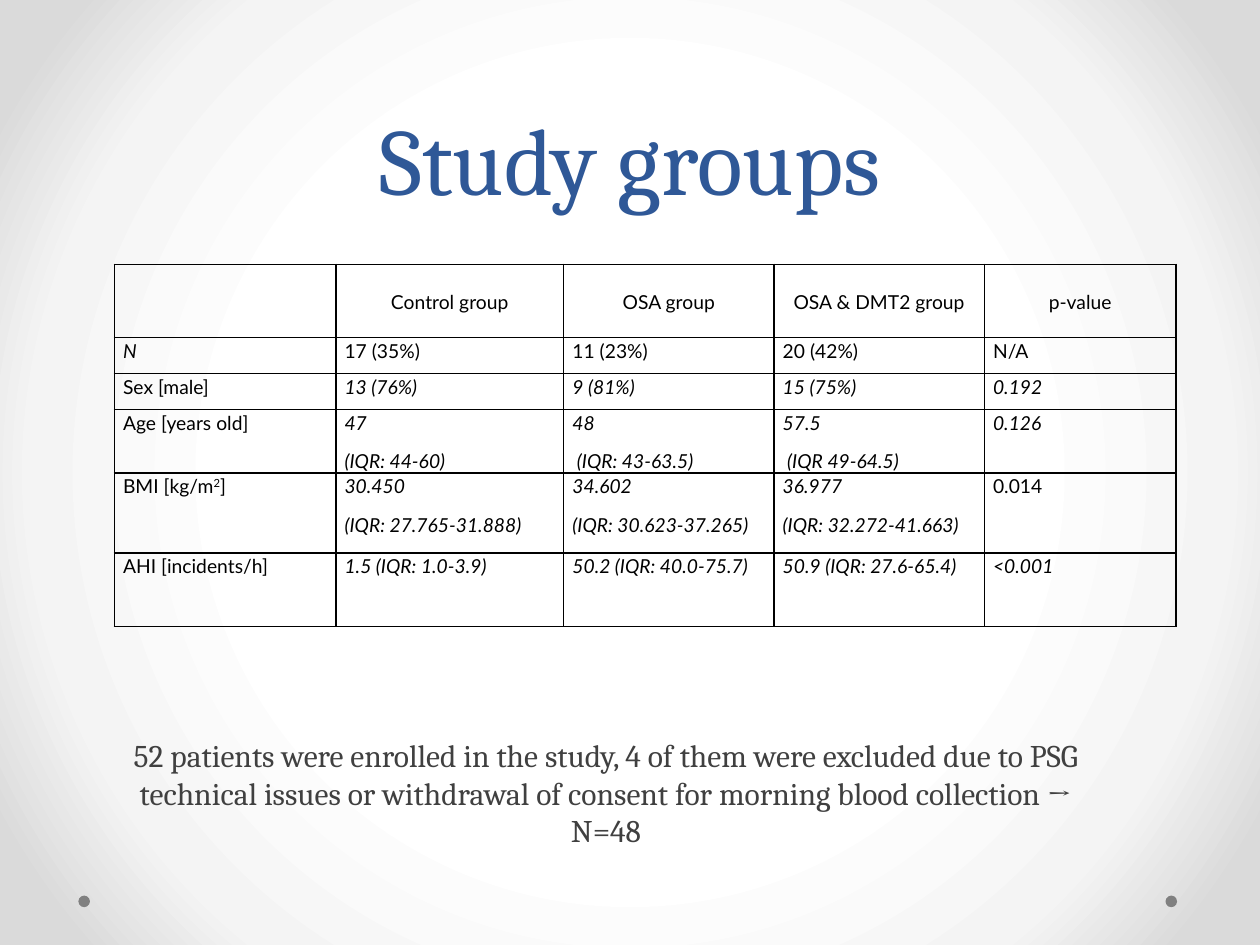
from lxml import etree
from pptx import Presentation
from pptx.dml.color import RGBColor
from pptx.enum.shapes import MSO_SHAPE
from pptx.enum.text import MSO_ANCHOR, PP_ALIGN
from pptx.oxml.ns import qn
from pptx.util import Pt

CENTER, LEFT = PP_ALIGN.CENTER, PP_ALIGN.LEFT
TOP, MIDDLE, BOTTOM = MSO_ANCHOR.TOP, MSO_ANCHOR.MIDDLE, MSO_ANCHOR.BOTTOM
OVAL = MSO_SHAPE.OVAL


def rgb(color):
    return RGBColor.from_string(color)


def add_run(p, text, font, size, color):
    r = p.add_run()
    r.text = text
    r.font.name = font
    r.font.size = Pt(size)
    r.font.color.rgb = rgb(color)
    return r


prs = Presentation()
prs.slide_width, prs.slide_height = Pt(720), Pt(540)
s = prs.slides.add_slide(prs.slide_layouts[6])

# Background: circular gradient, white in the middle
s.background.fill.gradient()
grad = s.background._cSld.find(".//" + qn("a:gradFill"))
for child in list(grad):
    grad.remove(child)
stops = etree.SubElement(grad, qn("a:gsLst"))
for pos, color in [(50, "FFFFFF"), (76, "F4F4F4"), (92, "DADADA")]:
    stop = etree.SubElement(stops, qn("a:gs"), pos=str(pos * 1000))
    etree.SubElement(stop, qn("a:srgbClr"), val=color)
circle = etree.SubElement(grad, qn("a:path"))
circle.set("path", "circle")
etree.SubElement(circle, qn("a:fillToRect"), l="50000", t="50000", r="50000", b="50000")

# Corner dots
for x in (666, 44.8):
    dot = s.shapes.add_shape(OVAL, Pt(x), Pt(511.8), Pt(6.6), Pt(6.6))
    dot.shadow.inherit = False
    dot.fill.solid()
    dot.fill.fore_color.rgb = rgb("808080")
    dot.line.fill.background()

# Title and note below the table
note = ("52 patients were enrolled in the study, 4 of them were excluded due to PSG "
        "technical issues or withdrawal of consent for morning blood collection → N=48")
for text, box, anchor, size, color, spacing in [
    ("Study groups", (36, 0, 648, 126), BOTTOM, 54, "2F5897", Pt(58)),
    (note, (65.5, 416.9, 561.6, 72.7), TOP, 18, "404040", None),
]:
    sp = s.shapes.add_textbox(*map(Pt, box))
    tf = sp.text_frame
    tf.word_wrap = True
    tf.vertical_anchor = anchor
    p = tf.paragraphs[0]
    p.alignment = CENTER
    p.line_spacing = spacing
    add_run(p, text, "Cambria", size, color)

# Table: "\n" parts paragraphs, "^" encloses a superscript
rows = [
    ["", "Control group", "OSA group", "OSA & DMT2 group", "p-value"],
    ["N", "17 (35%)", "11 (23%)", "20 (42%)", "N/A"],
    ["Sex [male]", "13 (76%)", "9 (81%)", "15 (75%)", "0.192"],
    ["Age [years old]", "47\n(IQR: 44-60)", "48\n (IQR: 43-63.5)",
     "57.5\n (IQR 49-64.5)", "0.126"],
    ["BMI [kg/m^2^]", "30.450\n(IQR: 27.765-31.888)", "34.602\n(IQR: 30.623-37.265)",
     "36.977\n(IQR: 32.272-41.663)", "0.014"],
    ["AHI [incidents/h]", "1.5 (IQR: 1.0-3.9)", "50.2 (IQR: 40.0-75.7)",
     "50.9 (IQR: 27.6-65.4)", "<0.001"],
]
widths = [126.6, 130.2, 120.2, 120.2, 109.6]
heights = [41.8, 20.6, 20.6, 36.2, 45.8, 42]
table = s.shapes.add_table(len(rows), len(widths), Pt(65.3), Pt(151),
                           Pt(sum(widths)), Pt(sum(heights))).table
table.first_row = table.horz_banding = False
for column, width in zip(table.columns, widths):
    column.width = Pt(width)
for row, height in zip(table.rows, heights):
    row.height = Pt(height)

for i, row in enumerate(rows):
    for j, text in enumerate(row):
        cell = table.cell(i, j)
        cell.margin_left = cell.margin_right = Pt(5)
        cell.margin_top = cell.margin_bottom = 0
        cell.vertical_anchor = TOP if i else MIDDLE
        italic = text == "N" or (i > 1 and j > 0 and text != "0.014")
        tf = cell.text_frame
        for k, line in enumerate(text.split("\n")):
            p = tf.add_paragraph() if k else tf.paragraphs[0]
            p.alignment = LEFT if i else CENTER
            p.line_spacing = 1.07
            p.space_after = Pt(8)
            for n, part in enumerate(line.split("^")):
                r = add_run(p, part, "Lato", 11, "000000")
                r.font.italic = italic
                if n % 2:
                    r.font._element.set("baseline", "30000")
        # Borders come before the fill in the cell properties
        tcPr = cell._tc.get_or_add_tcPr()
        for side in ("lnL", "lnR", "lnT", "lnB"):
            ln = etree.SubElement(tcPr, qn("a:" + side), w=str(Pt(1)))
            solid = etree.SubElement(ln, qn("a:solidFill"))
            etree.SubElement(solid, qn("a:srgbClr"), val="000000")
        cell.fill.background()

prs.save("out.pptx")
